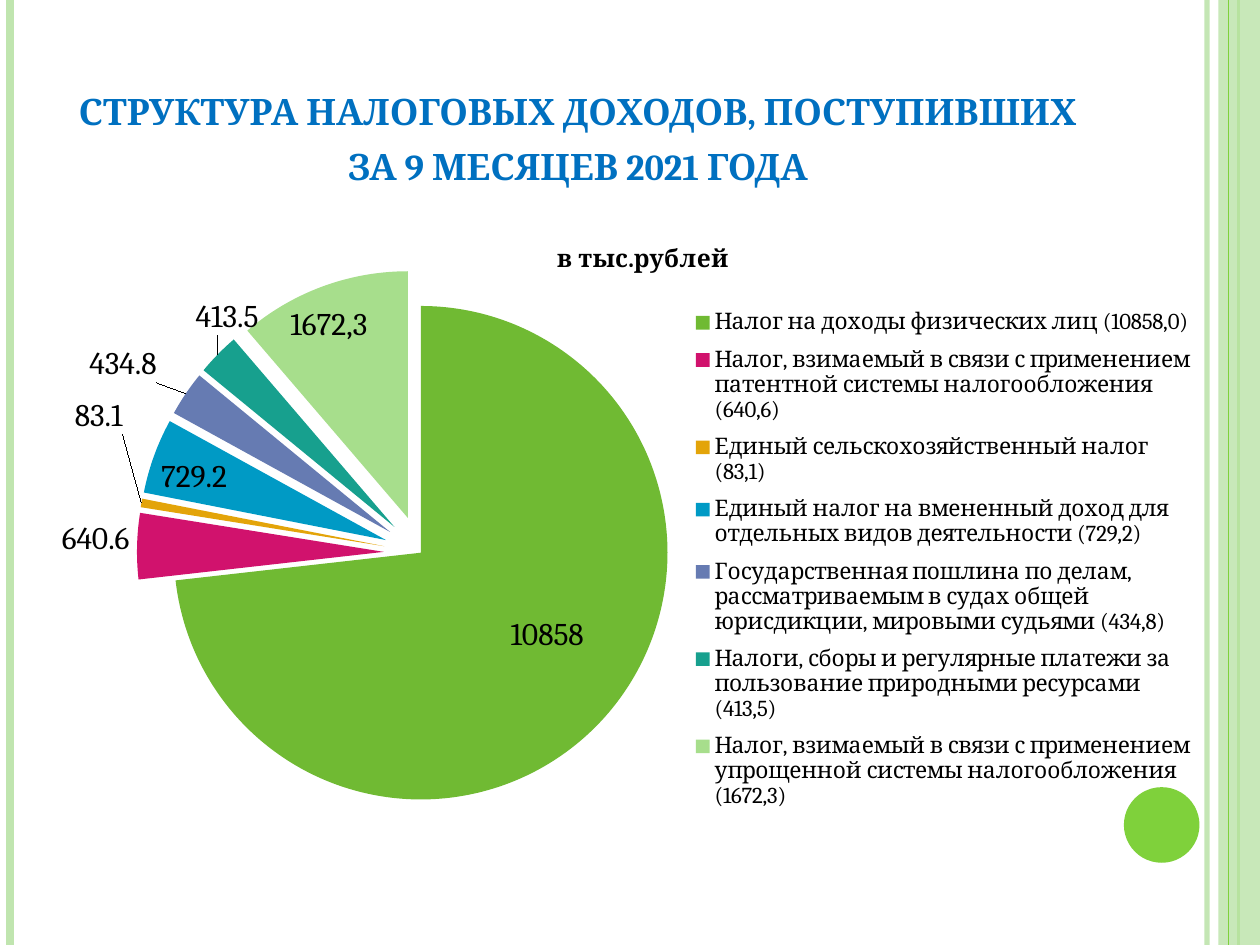
from dataclasses import dataclass

from lxml import etree
from pptx import Presentation
from pptx.chart.data import CategoryChartData
from pptx.dml.color import RGBColor
from pptx.enum.chart import XL_CHART_TYPE, XL_LABEL_POSITION, XL_LEGEND_POSITION
from pptx.enum.shapes import MSO_CONNECTOR, MSO_SHAPE
from pptx.enum.text import MSO_ANCHOR, PP_ALIGN
from pptx.oxml.ns import qn
from pptx.util import Inches, Pt

PIE = XL_CHART_TYPE.PIE
RIGHT = XL_LEGEND_POSITION.RIGHT
CENTER = XL_LABEL_POSITION.CENTER
INSIDE = XL_LABEL_POSITION.INSIDE_END
OUTSIDE = XL_LABEL_POSITION.OUTSIDE_END
STRAIGHT = MSO_CONNECTOR.STRAIGHT
RECT, OVAL = MSO_SHAPE.RECTANGLE, MSO_SHAPE.OVAL
BOTTOM = MSO_ANCHOR.BOTTOM
MIDDLE = PP_ALIGN.CENTER

W, H = 10, 7.5
FONT = "Cambria"
COLORS = {
    "pale": "C0E5AF", "lime": "7FD13B", "title": "0070C0", "text": "000000",
    "green": "70BA33", "pink": "D1126D", "amber": "E3A409", "cyan": "009AC5",
    "slate": "667BB2", "teal": "17A08E", "light": "A7DE8C",
}


@dataclass
class Rule:
    x: float
    color: str
    width: float
    alpha: int = 100


@dataclass
class Block:
    kind: int
    box: tuple
    color: str
    alpha: int = 100


@dataclass
class Slice:
    name: str
    value: float
    color: str
    position: int
    shift: tuple = ()
    label: str = ""
    explosion: int = 15


BACK_RULES = [Rule(0.958, "pale", 3, 93), Rule(0.008, "pale", 4.5), Rule(0.983, "lime", 1.5)]
FRONT_RULES = [Rule(0.975, "lime", 0.75)]
BAND = Block(RECT, (0.967, 0, 0.033, 1), "pale", 87)
DISC = Block(OVAL, (0.892, 0.833, 0.06, 0.08), "lime")
SLICES = [
    Slice("Налог на доходы физических лиц (10858,0)", 10858, "green", CENTER,
          (0.03, 0), "10858", 0),
    Slice("Налог, взимаемый в связи с применением патентной системы "
          "налогообложения (640,6)", 640.6, "pink", OUTSIDE, (0, -0.01)),
    Slice("Единый сельскохозяйственный налог (83,1)", 83.1, "amber", OUTSIDE, (-0.01, -0.1)),
    Slice("Единый налог на вмененный доход для отдельных видов деятельности (729,2)",
          729.2, "cyan", INSIDE),
    Slice("Государственная пошлина по делам, рассматриваемым в судах общей "
          "юрисдикции, мировыми судьями (434,8)", 434.8, "slate", OUTSIDE, (-0.02, -0.01)),
    Slice("Налоги, сборы и регулярные платежи за пользование природными "
          "ресурсами (413,5)", 413.5, "teal", OUTSIDE, (0.04, -0.02)),
    Slice("Налог, взимаемый в связи с применением упрощенной системы "
          "налогообложения (1672,3)", 1672.3, "light", INSIDE, (-0.03, 0.02), "1672,3"),
]


def place(x: float, y: float, w: float, h: float) -> tuple:
    return Inches(x * W), Inches(y * H), Inches(w * W), Inches(h * H)


def style(font, size: float, color: str = "text", bold: bool = False) -> None:
    for key, value in {"name": FONT, "size": Pt(size), "bold": bold}.items():
        setattr(font, key, value)
    font.color.rgb = RGBColor.from_string(COLORS[color])


def paint(fill, color: str, alpha: int = 100) -> None:
    fill.solid()
    fill.fore_color.rgb = RGBColor.from_string(COLORS[color])
    if alpha < 100:
        clr = fill._xPr.find(".//" + qn("a:srgbClr"))
        etree.SubElement(clr, qn("a:alpha")).set("val", str(alpha * 1000))


def draw_rule(s, rule: Rule) -> None:
    x = Inches(rule.x * W)
    line = s.shapes.add_connector(STRAIGHT, x, 0, x, Inches(H))
    line.line.width = Pt(rule.width)
    paint(line.line.fill, rule.color, rule.alpha)
    etree.SubElement(line._element.spPr, qn("a:effectLst"))


def draw_block(s, block: Block) -> None:
    sp = s.shapes.add_shape(block.kind, *place(*block.box))
    sp.shadow.inherit = False
    paint(sp.fill, block.color, block.alpha)
    sp.line.fill.background()


def set_layout(parent, after: str, **values) -> None:
    for old in parent.findall(qn("c:layout")):
        parent.remove(old)
    layout = etree.Element(qn("c:layout"))
    manual = etree.SubElement(layout, qn("c:manualLayout"))
    for tag, value in values.items():
        etree.SubElement(manual, qn("c:" + tag)).set("val", str(value))
    anchor = parent.find(qn(after)) if after else None
    if anchor is None:
        parent.insert(0, layout)
    else:
        anchor.addnext(layout)


def format_slice(point, item: Slice) -> None:
    paint(point.format.fill, item.color)
    point.format.line.fill.background()
    explosion = etree.Element(qn("c:explosion"))
    explosion.set("val", str(item.explosion))
    point.format.fill._xPr.addprevious(explosion)
    label = point.data_label
    if item.label:
        r = label.text_frame.paragraphs[0].add_run()
        r.text = item.label
        style(r.font, 18)
    else:
        style(label.font, 18)
    label.position = item.position
    d_lbl = label._get_or_add_dLbl()
    d_lbl.find(".//" + qn("a:bodyPr")).set("wrap", "none")
    if item.shift:
        x, y = item.shift
        set_layout(d_lbl, "c:idx", x=x, y=y)


def draw_chart(s) -> None:
    data = CategoryChartData()
    data.categories = [item.name for item in SLICES]
    data.add_series("Series 1", [item.value for item in SLICES])
    chart = s.shapes.add_chart(PIE, *place(0.047, 0.23, 0.911, 0.71), data).chart
    style(chart.font, 18)
    chart.has_title = True
    r = chart.chart_title.text_frame.paragraphs[0].add_run()
    r.text = "в тыс.рублей"
    style(r.font, 14, bold=True)
    set_layout(chart.chart_title._element, "c:tx", xMode="edge", yMode="edge", x=0.43, y=0.03)

    chart.has_legend = True
    legend = chart.legend
    legend.position = RIGHT
    legend.include_in_layout = False
    style(legend.font, 13)
    set_layout(legend._element, "c:legendPos", xMode="edge", yMode="edge",
               x=0.55, y=0.12, w=0.44, h=0.78)

    plot = chart.plots[0]
    plot.vary_by_categories = True
    set_layout(chart._chartSpace.chart.plotArea, "", layoutTarget="inner",
               xMode="edge", yMode="edge", x=0.1, y=0.13, w=0.43, h=0.74)
    series = plot.series[0]
    series.data_labels.show_value = True
    style(series.data_labels.font, 18)
    for i, item in enumerate(SLICES):
        format_slice(series.points[i], item)


def draw_title(s) -> None:
    title = s.shapes.title
    title.left, title.top, title.width, title.height = place(0.05, 0.04, 0.817, 0.167)
    tf = title.text_frame
    tf.word_wrap = True
    tf.vertical_anchor = BOTTOM
    p = tf.paragraphs[0]
    p.alignment = MIDDLE
    r = p.add_run()
    r.text = "структура налоговых доходов, поступивших за 9 месяцев 2021 года"
    style(r.font, 26, "title", True)
    r._r.get_or_add_rPr().set("cap", "small")


def main() -> None:
    prs = Presentation()
    prs.slide_width, prs.slide_height = Inches(W), Inches(H)
    s = prs.slides.add_slide(prs.slide_layouts[5])
    for rule in BACK_RULES:
        draw_rule(s, rule)
    draw_block(s, BAND)
    for rule in FRONT_RULES:
        draw_rule(s, rule)
    draw_block(s, DISC)
    draw_title(s)
    draw_chart(s)
    prs.save("out.pptx")


if __name__ == "__main__":
    main()
